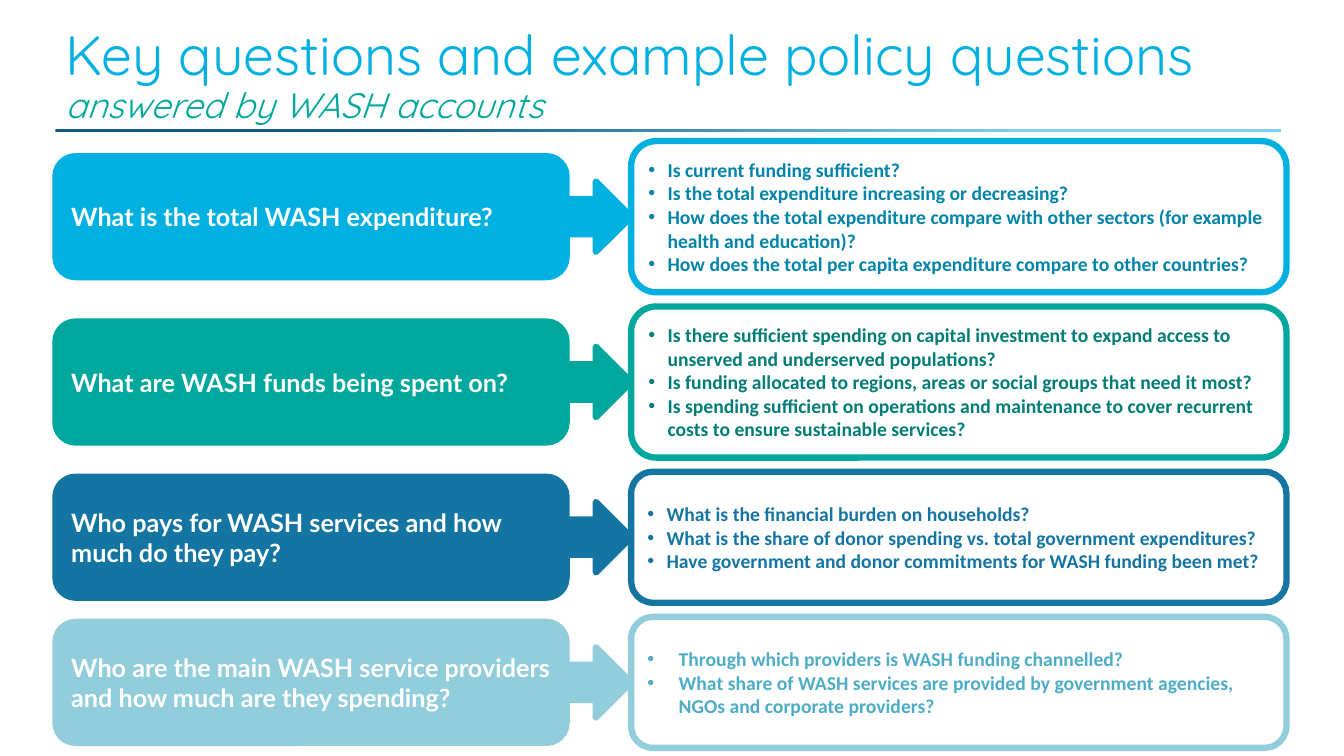
from dataclasses import dataclass

from lxml import etree
from pptx import Presentation
from pptx import util as u
from pptx.dml import color
from pptx.enum import shapes, text
from pptx.oxml import ns


@dataclass(frozen=True)
class Theme:
    sky: str = "00B0E1"
    teal: str = "00A79D"
    navy: str = "1475A3"
    mist: str = "92CDDC"
    sky_text: str = "0084A9"
    teal_text: str = "007D76"
    mist_text: str = "4DADC6"
    white: str = "FFFFFF"
    rule_start: str = "0F5C78"
    rule_end: str = "7BD0EF"
    title_font: str = "Quicksand"
    question_font: str = "Lato"
    example_font: str = "Calibri"
    title_size: float = 39.6
    subtitle_size: float = 25.2
    question_size: float = 18
    example_size: float = 14
    outline: float = 4.5


@dataclass(frozen=True)
class Box:
    left: float
    top: float
    width: float
    height: float

    def inches(self):
        return [u.Inches(v) for v in (self.left, self.top, self.width, self.height)]


THEME = Theme()
TITLE = "Key questions and example policy questions"
SUBTITLE = "answered by WASH accounts"
HEADER = Box(0.55, 0.13, 12.16, 1.17)
ROWS_LEFT, ROWS_TOP, ROWS_WIDTH, ROW_GAP = 0.55, 1.4, 12.21, 0.14

ROWS = [
    (1.5, THEME.sky, THEME.sky_text, 0.19, "What is the total WASH expenditure?", [
        "Is current funding sufficient?",
        "Is the total expenditure increasing or decreasing?",
        "How does the total expenditure compare with other sectors (for example health and education)?",
        "How does the total per capita expenditure compare to other countries?",
    ]),
    (1.5, THEME.teal, THEME.teal_text, 0.19, "What are WASH funds being spent on?", [
        "Is there sufficient spending on capital investment to expand access to unserved and underserved populations?",
        "Is funding allocated to regions, areas or social groups that need it most?",
        "Is spending sufficient on operations and maintenance to cover recurrent costs to ensure sustainable services?",
    ]),
    (1.3, THEME.navy, THEME.navy, 0.19, "Who pays for WASH services and how much do they pay?", [
        "What is the financial burden on households?",
        "What is the share of donor spending vs. total government expenditures?",
        "Have government and donor commitments for WASH funding been met?",
    ]),
    (1.3, THEME.mist, THEME.mist_text, 0.31,
     "Who are the main WASH service providers and how much are they spending?", [
         "Through which providers is WASH funding channelled?",
         "What share of WASH services are provided by government agencies, NGOs and corporate providers?",
     ]),
]


def rgb(value):
    return color.RGBColor.from_string(value)


def style_run(run, font, size, tint, bold=False, italic=False):
    run.font.name = font
    run.font.size = u.Pt(size)
    run.font.color.rgb = rgb(tint)
    run.font.bold = bold
    run.font.italic = italic


def add_block(slide, preset, box, fill, outline):
    block = slide.shapes.add_shape(preset, *box.inches())
    block.shadow.inherit = False
    block.fill.solid()
    block.fill.fore_color.rgb = rgb(fill)
    block.line.color.rgb = rgb(outline)
    block.line.width = u.Pt(THEME.outline)
    return block


def write_lines(block, lines, font, size, tint, indent=0):
    frame = block.text_frame
    frame.word_wrap = True
    frame.vertical_anchor = text.MSO_ANCHOR.MIDDLE
    frame.text = "\n".join(lines)
    for paragraph in frame.paragraphs:
        paragraph.alignment = text.PP_ALIGN.LEFT
        if indent:
            add_bullet(paragraph, indent)
        style_run(paragraph.runs[0], font, size, tint, bold=True)


def add_bullet(paragraph, indent):
    properties = paragraph._p.get_or_add_pPr()
    properties.set("marL", str(u.Inches(indent)))
    properties.set("indent", str(-u.Inches(indent)))
    bullet_font = etree.SubElement(properties, ns.qn("a:buFont"))
    bullet_font.set("typeface", "Arial")
    bullet = etree.SubElement(properties, ns.qn("a:buChar"))
    bullet.set("char", "•")


def add_header(slide, box):
    rule_box = Box(box.left, box.top + 1.15, box.width, 0.03)
    rule = slide.shapes.add_shape(shapes.MSO_SHAPE.RECTANGLE, *rule_box.inches())
    rule.shadow.inherit = False
    rule.line.fill.background()
    rule.fill.gradient()
    rule.fill.gradient_angle = 0
    stops = ((0.28, THEME.rule_start), (0.79, THEME.rule_end))
    for stop, (position, tint) in zip(rule.fill.gradient_stops, stops):
        stop.position = position
        stop.color.rgb = rgb(tint)

    heading = slide.shapes.add_textbox(*box.inches())
    frame = heading.text_frame
    frame.word_wrap = True
    frame.vertical_anchor = text.MSO_ANCHOR.BOTTOM
    paragraph = frame.paragraphs[0]
    paragraph.text = f"{TITLE}\v{SUBTITLE}"
    paragraph.line_spacing = 0.9
    title, subtitle = paragraph.runs
    style_run(title, THEME.title_font, THEME.title_size, THEME.sky)
    style_run(subtitle, THEME.title_font, THEME.subtitle_size, THEME.teal, italic=True)


def add_question_row(slide, box, accent, example_tint, indent, question, examples):
    middle = box.top + box.height / 2
    card_width, label_width, label_height = 6.5, 5.07, 1.2
    arrow_width, arrow_height = 0.9, 0.7
    card_left = box.left + box.width - card_width

    arrow_box = Box(card_left - arrow_width, middle - arrow_height / 2, arrow_width, arrow_height)
    add_block(slide, shapes.MSO_SHAPE.RIGHT_ARROW, arrow_box, accent, accent)

    card_box = Box(card_left, box.top, card_width, box.height)
    card = add_block(slide, shapes.MSO_SHAPE.ROUNDED_RECTANGLE, card_box, THEME.white, accent)
    write_lines(card, examples, THEME.example_font, THEME.example_size, example_tint, indent)

    label_box = Box(box.left, middle - label_height / 2, label_width, label_height)
    label = add_block(slide, shapes.MSO_SHAPE.ROUNDED_RECTANGLE, label_box, accent, accent)
    write_lines(label, [question], THEME.question_font, THEME.question_size, THEME.white)


def main():
    deck = Presentation()
    deck.slide_width, deck.slide_height = u.Inches(13.33), u.Inches(7.5)
    slide = deck.slides.add_slide(deck.slide_layouts[6])
    add_header(slide, HEADER)
    top = ROWS_TOP
    for height, *content in ROWS:
        add_question_row(slide, Box(ROWS_LEFT, top, ROWS_WIDTH, height), *content)
        top += height + ROW_GAP
    deck.save("out.pptx")


if __name__ == "__main__":
    main()
